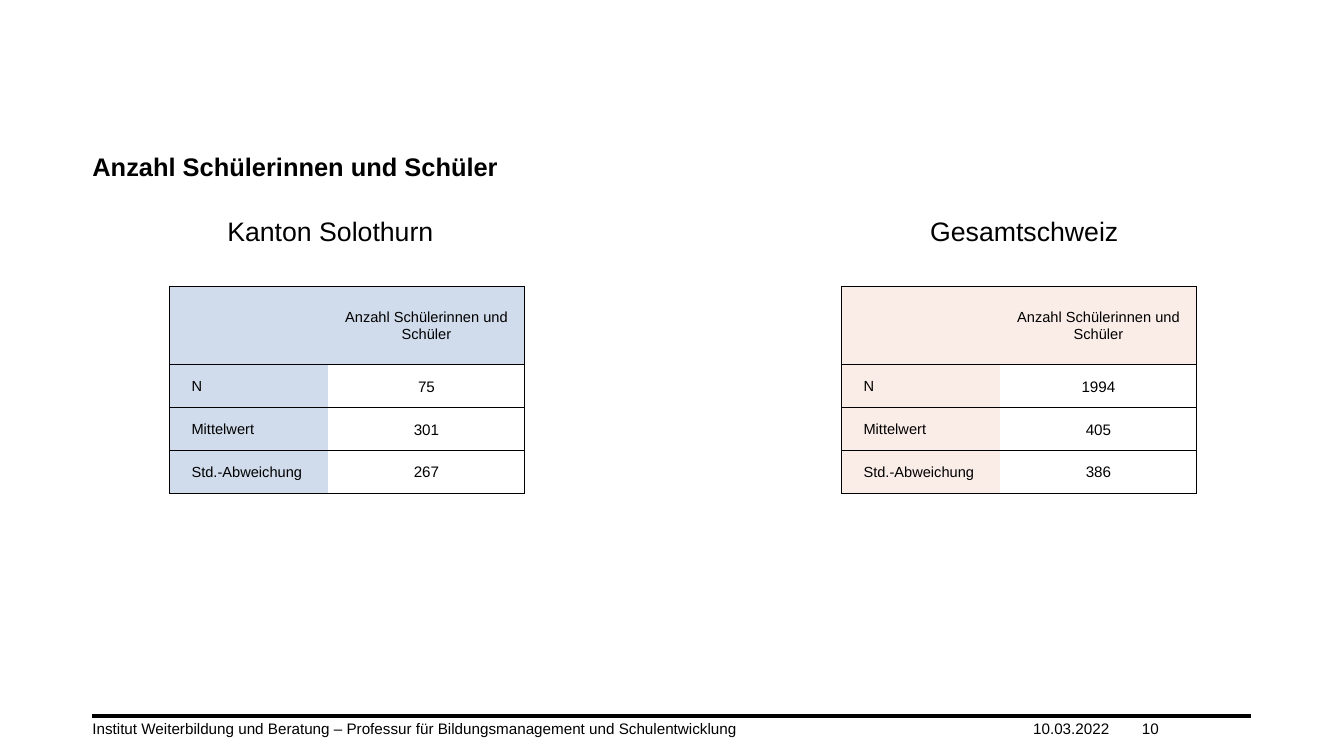
import pptx
import pptx.dml.color
import pptx.enum.shapes
import pptx.enum.text
import pptx.oxml
import pptx.oxml.ns
import pptx.util
from lxml import etree

Pt = pptx.util.Pt
ALIGN = pptx.enum.text.PP_ALIGN
ANCHOR = pptx.enum.text.MSO_ANCHOR
qn = pptx.oxml.ns.qn

COLORS = {"ink": "000000", "canton": "D0DBEB", "country": "FAECE6"}
NO_STYLE_NO_GRID = "{2D5ABB26-0587-4C30-8999-92F81FD0307C}"
COLUMN_WIDTHS = (16.8, 84.7, 23.8, 154.4)
ROW_HEIGHTS = (62, 33.8, 33.8, 33.8)
MEASURES = ("N", "Mittelwert", "Std.-Abweichung")
LEFT, RIGHT = 72.8, 985
FOOTER_TOP = 566.6


class SlideBuilder:
    font_name = "Arial"

    def __init__(self, deck):
        self.page = deck.slides.add_slide(deck.slide_layouts[6])

    def color(self, name):
        return pptx.dml.color.RGBColor.from_string(COLORS[name])

    def fill_text(self, frame, text, size, align=ALIGN.LEFT, bold=False):
        frame.text = text
        para = frame.paragraphs[0]
        para.alignment = align
        for span in para.runs:
            span.font.name = self.font_name
            span.font.size = Pt(size)
            span.font.bold = bold
            span.font.color.rgb = self.color("ink")

    def text(self, text, left, top, width, height, size, align=ALIGN.LEFT,
             bold=False, anchor=ANCHOR.TOP, inset=0):
        box = self.page.shapes.add_textbox(Pt(left), Pt(top), Pt(width), Pt(height))
        frame = box.text_frame
        frame.word_wrap = True
        frame.vertical_anchor = anchor
        frame.margin_left = frame.margin_right = Pt(inset)
        frame.margin_top = frame.margin_bottom = Pt(inset / 2)
        self.fill_text(frame, text, size, align, bold)

    def rule(self, left, right, top, weight):
        line = self.page.shapes.add_connector(
            pptx.enum.shapes.MSO_CONNECTOR.STRAIGHT, Pt(left), Pt(top), Pt(right), Pt(top))
        line.line.color.rgb = self.color("ink")
        line.line.width = Pt(weight)
        etree.SubElement(line._element.spPr, qn("a:effectLst"))

    def borders(self, cell, weights):
        """Draw the cell edges given as {"L", "R", "T", "B": weight}, in that order."""
        properties = cell._tc.get_or_add_tcPr()
        for position, (side, weight) in enumerate(weights.items()):
            edge = pptx.oxml.parse_xml(
                f'<a:ln{side} {pptx.oxml.ns.nsdecls("a")} w="{Pt(weight)}"><a:solidFill>'
                f'<a:srgbClr val="{COLORS["ink"]}"/></a:solidFill></a:ln{side}>')
            properties.insert(position, edge)

    def cell(self, cell, text, size, align, fill):
        cell.margin_left = cell.margin_right = cell.margin_top = Pt(0.7)
        cell.margin_bottom = 0
        cell.vertical_anchor = ANCHOR.MIDDLE
        if fill:
            cell.fill.solid()
            cell.fill.fore_color.rgb = self.color(fill)
        else:
            cell.fill.background()
        if text:
            self.fill_text(cell.text_frame, text, size, align)

    def statistics(self, left, top, values, tint):
        table = self.page.shapes.add_table(
            len(ROW_HEIGHTS), len(COLUMN_WIDTHS), Pt(left), Pt(top),
            Pt(sum(COLUMN_WIDTHS)), Pt(sum(ROW_HEIGHTS))).table
        table.first_row = table.horz_banding = False
        table._tbl.tblPr.find(qn("a:tableStyleId")).text = NO_STYLE_NO_GRID
        for column, width in zip(table.columns, COLUMN_WIDTHS):
            column.width = Pt(width)
        for row, height in zip(table.rows, ROW_HEIGHTS):
            row.height = Pt(height)

        header = ("", "", "", "Anzahl Schülerinnen und Schüler")
        body = [("", name, "", value) for name, value in zip(MEASURES, values)]
        last_column, last_row = len(COLUMN_WIDTHS) - 1, len(body)
        for i, texts in enumerate([header, *body]):
            for j, text in enumerate(texts):
                is_value = i > 0 and j == last_column
                align = ALIGN.CENTER if j == last_column else ALIGN.LEFT
                cell = table.cell(i, j)
                self.cell(cell, text, 12 if is_value else 11.5, align,
                          None if is_value else tint)
                weights = {}
                if j == 0:
                    weights["L"] = 1
                if j == last_column:
                    weights["R"] = 1
                weights["T"] = 1 if i < 2 else 0.75
                weights["B"] = 1 if i in (0, last_row) else 0.75
                self.borders(cell, weights)
            if i > 0:
                table.cell(i, 1).merge(table.cell(i, 2))


def main():
    deck = pptx.Presentation()
    deck.slide_width, deck.slide_height = Pt(1058.4), Pt(595.4)
    slide = SlideBuilder(deck)

    slide.rule(LEFT, RIGHT, 563.8, 3)
    slide.text("Anzahl Schülerinnen und Schüler", LEFT, 118.8, RIGHT - LEFT, 28.8, 20, bold=True)

    regions = (
        ("Kanton Solothurn", 170.6, 177.8, 133.4, ("75", "301", "267"), "canton"),
        ("Gesamtschweiz", 722.2, 165.6, 662.6, ("1994", "405", "386"), "country"),
    )
    for name, name_left, name_width, table_left, values, tint in regions:
        slide.text(name, name_left, 165.6, name_width, 32.4, 21, ALIGN.RIGHT, inset=7.2)
        slide.statistics(table_left, 225.4, values, tint)

    footer = (
        ("Institut Weiterbildung und Beratung – Professur für Bildungsmanagement "
         "und Schulentwicklung", LEFT, 740.8),
        ("10.03.2022", 813.6, 85.7),
        ("10", 899.3, 85.7),
    )
    for text, left, width in footer:
        slide.text(text, left, FOOTER_TOP, width, 14.4, 12, anchor=ANCHOR.BOTTOM)

    deck.save("out.pptx")


if __name__ == "__main__":
    main()
